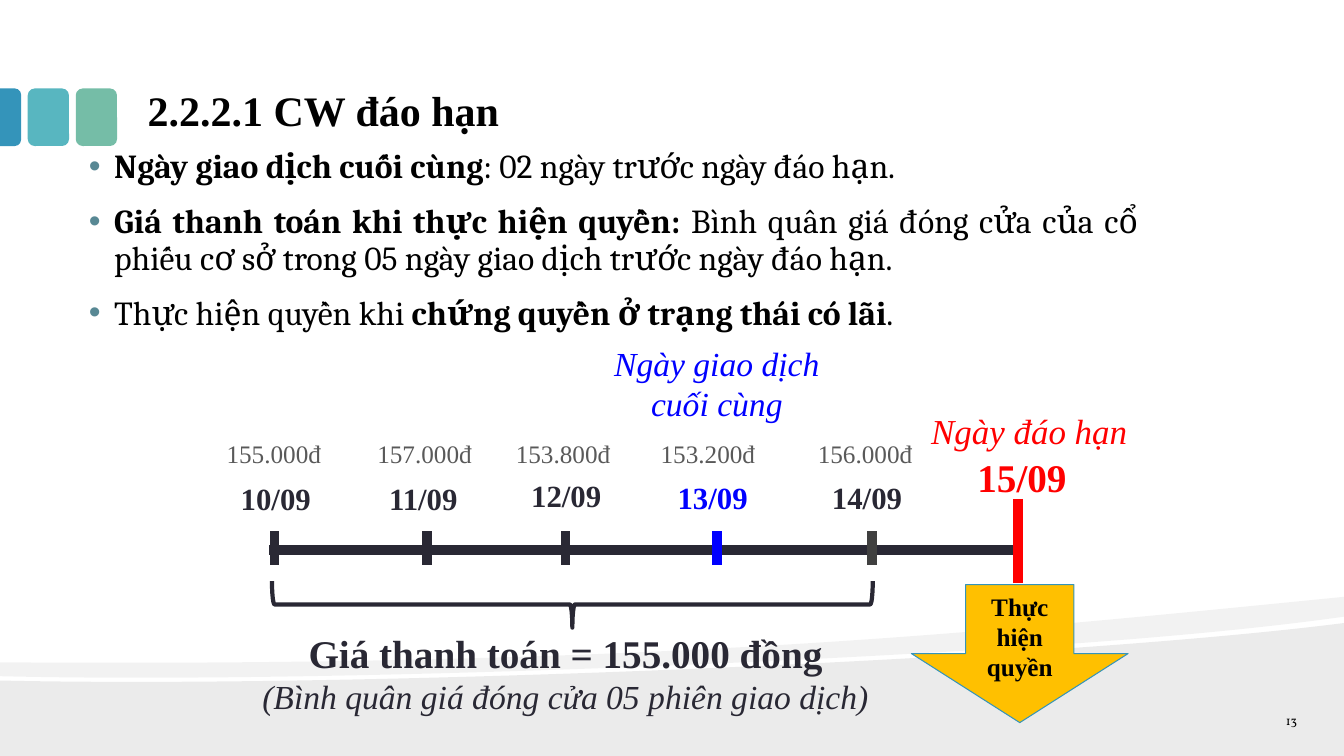
import pptx
import pptx.dml.color
import pptx.enum.shapes
import pptx.enum.text
import pptx.oxml
import pptx.oxml.ns
import pptx.util
from pptx.util import Cm

SHAPES = pptx.enum.shapes.MSO_SHAPE
ALIGN = pptx.enum.text.PP_ALIGN
ANCHOR = pptx.enum.text.MSO_ANCHOR
DARK, BLUE, RED, BLACK = "292834", "0000FF", "FF0000", "000000"
SERIF = "Times New Roman"


def color(hex_value):
    return pptx.dml.color.RGBColor.from_string(hex_value)


def add_xml(parent, tag, **attributes):
    element = pptx.oxml.parse_xml(f"<a:{tag} {pptx.oxml.ns.nsdecls('a')}/>")
    for name, value in attributes.items():
        element.set(name, str(value))
    parent.append(element)
    return element


def format_run(run, size, hex_value, bold=False, italic=False, font=SERIF):
    run.font.size = pptx.util.Pt(size)
    run.font.name = font
    run.font.bold = bold
    run.font.italic = italic
    run.font.color.rgb = color(hex_value)


def paint(shape, fill=None, line=None, width=0.75, opacity=None):
    shape.shadow.inherit = False
    if fill:
        shape.fill.solid()
        shape.fill.fore_color.rgb = color(fill)
        if opacity:
            fill_color = shape.fill._xPr.solidFill.srgbClr
            add_xml(fill_color, "alpha", val=opacity * 1000)
    else:
        shape.fill.background()
    if line:
        shape.line.color.rgb = color(line)
        shape.line.width = pptx.util.Pt(width)
    else:
        shape.line.fill.background()


def add_preset(slide, preset, box, rotation=0, adjustments=(), **style):
    shape = slide.shapes.add_shape(preset, *map(Cm, box))
    shape.rotation = rotation
    for index, value in enumerate(adjustments):
        shape.adjustments[index] = value
    paint(shape, **style)
    return shape


def add_wave(slide, points, curve_starts, opacity):
    """Closed outline; each index in curve_starts begins a cubic of three points."""
    points = [(Cm(x), Cm(y)) for x, y in points]
    builder = slide.shapes.build_freeform(*points[0], scale=1.0)
    builder.add_line_segments(points[1:], close=True)
    shape = builder.convert_to_shape()
    segments = list(shape._element.iter(pptx.oxml.ns.qn("a:lnTo")))
    for start in curve_starts:
        first = segments[start - 1]
        bezier = add_xml(first.getparent(), "cubicBezTo")
        first.addprevious(bezier)
        for segment in segments[start - 1:start + 2]:
            bezier.append(segment[0])
            segment.getparent().remove(segment)
    paint(shape, fill=BLACK, opacity=opacity)


def add_line(slide, x1, y1, x2, y2, hex_value):
    line = slide.shapes.add_connector(
        pptx.enum.shapes.MSO_CONNECTOR.STRAIGHT, Cm(x1), Cm(y1), Cm(x2), Cm(y2))
    line.line.color.rgb = color(hex_value)
    line.line.width = pptx.util.Pt(7)
    add_xml(line._element.spPr, "effectLst")


def add_label(slide, box, text, size, hex_value, align=ALIGN.CENTER, **style):
    shape = slide.shapes.add_textbox(*map(Cm, box))
    shape.text_frame.word_wrap = True
    paragraph = shape.text_frame.paragraphs[0]
    paragraph.text = text
    paragraph.alignment = align
    format_run(paragraph.runs[0], size, hex_value, **style)
    return shape.text_frame


def set_margins(frame):
    frame.margin_left = frame.margin_right = Cm(0.33)
    frame.margin_top = frame.margin_bottom = Cm(0.18)


def add_background(slide):
    add_wave(slide, [(33.87, 15.7), (33.87, 19.05), (0, 19.05), (0, 17.15),
                     (8.94, 17.35), (26.47, 16.64), (33.87, 15.7)], (4,), 8)
    add_wave(slide, [(33.87, 15.04), (33.87, 15.54), (31.9, 15.82), (29.18, 16.08),
                     (26.14, 16.28), (17.73, 16.84), (6.55, 17.2), (0, 17.04),
                     (0, 16.69), (16.56, 16.81), (24.66, 15.95), (33.87, 15.04)],
             (2, 5, 9), 5)
    for left, fill in ((1.91, "75BDA7"), (0.7, "58B6C0")):
        add_preset(slide, SHAPES.ROUNDED_RECTANGLE, (left, 2.23, 1.04, 1.45), fill=fill)
    add_preset(slide, SHAPES.ROUND_2_SAME_RECTANGLE, (-0.46, 2.69, 1.45, 0.53), 90,
               (0.292, 0), fill="3494BA")


def add_title(slide, text):
    title = slide.shapes.title
    title.left, title.top, title.width, title.height = map(Cm, (3.39, 0.43, 27.1, 3.15))
    frame = title.text_frame
    frame.text = text
    frame.auto_size = pptx.enum.text.MSO_AUTO_SIZE.NONE
    frame.vertical_anchor = ANCHOR.BOTTOM
    set_margins(frame)
    frame.paragraphs[0].alignment = ALIGN.LEFT
    format_run(frame.paragraphs[0].runs[0], 30, BLACK, bold=True)


def add_bullets(slide, bullets):
    frame = slide.shapes.add_textbox(*map(Cm, (1.91, 3.59, 27.1, 12.7))).text_frame
    frame.word_wrap = True
    set_margins(frame)
    for index, pieces in enumerate(bullets):
        paragraph = frame.add_paragraph() if index else frame.paragraphs[0]
        paragraph.alignment = ALIGN.JUSTIFY
        paragraph.line_spacing = 0.9
        paragraph.space_before = pptx.util.Pt(13.5)
        properties = paragraph._p.get_or_add_pPr()
        properties.set("marL", str(Cm(0.64)))
        properties.set("indent", str(-Cm(0.64)))
        add_xml(add_xml(properties, "buClr"), "srgbClr", val="588894")
        add_xml(properties, "buFont", typeface="Arial")
        add_xml(properties, "buChar", char="•")
        for text, bold in pieces:
            run = paragraph.add_run()
            run.text = text
            format_run(run, 24, BLACK, bold, font="Cambria")


def add_prices(slide, prices):
    """One row of closing prices, each centred on a tab stop."""
    left, margin = 4.83, 0.25
    frame = add_label(slide, (left, 10.92, 18.85, 3.33),
                      "".join("\t" + price for _, price in prices), 18, "595959",
                      ALIGN.LEFT)
    tab_stops = add_xml(frame.paragraphs[0]._p.get_or_add_pPr(), "tabLst")
    for center, _ in prices:
        add_xml(tab_stops, "tab", pos=Cm(center - left - margin), algn="ctr")


def add_timeline(slide):
    add_line(slide, 6.78, 13.85, 25.63, 13.85, DARK)
    # tick and date centres, top of the date, colours, date
    sessions = (
        (6.92, 6.95, 11.96, DARK, DARK, "10/09"),
        (10.77, 10.67, 11.96, DARK, DARK, "11/09"),
        (14.25, 14.27, 11.89, DARK, DARK, "12/09"),
        (18.06, 17.96, 11.94, BLUE, BLUE, "13/09"),
        (21.97, 21.85, 11.94, "404040", DARK, "14/09"),
    )
    for tick_x, date_x, top, tick_color, date_color, date in sessions:
        add_line(slide, tick_x, 13.39, tick_x, 14.23, tick_color)
        add_label(slide, (date_x - 1.17, top, 2.34, 1.19), date, 22, date_color, bold=True)
    add_prices(slide, ((6.9, "155.000đ"), (10.7, "157.000đ"), (14.19, "153.800đ"),
                       (17.84, "153.200đ"), (21.8, "156.000đ")))
    add_label(slide, (15.13, 8.51, 5.87, 2.31), "Ngày giao dịch cuối cùng", 24, BLUE,
              italic=True)

    # Expiry day
    add_line(slide, 25.65, 12.57, 25.65, 14.7, RED)
    add_label(slide, (23.95, 11.31, 3.61, 1.45), "15/09", 28, RED, bold=True)
    add_label(slide, (22.66, 10.2, 6.55, 1.32), "Ngày đáo hạn", 25, RED, italic=True)
    arrow = add_preset(slide, SHAPES.DOWN_ARROW, (22.97, 14.73, 5.46, 3.48),
                       fill="FFC000", line="3494BA")
    arrow.text_frame.text = "Thực hiện quyền"
    arrow.text_frame.vertical_anchor = ANCHOR.MIDDLE
    arrow.text_frame.paragraphs[0].alignment = ALIGN.CENTER
    format_run(arrow.text_frame.paragraphs[0].runs[0], 18, BLACK, bold=True)

    # Settlement price
    add_preset(slide, SHAPES.LEFT_BRACE, (13.84, 7.66, 1.17, 15.14), 270, (0.055, 0.5),
               line=DARK, width=3)
    frame = add_label(slide, (6.21, 15.73, 16.08, 2.49), "Giá thanh toán = 155.000 đồng",
                      28, DARK, bold=True)
    note = frame.add_paragraph()
    note.text = "(Bình quân giá đóng cửa 05 phiên giao dịch)"
    note.alignment = ALIGN.CENTER
    format_run(note.runs[0], 24, DARK, italic=True)


def main():
    presentation = pptx.Presentation()
    presentation.slide_width, presentation.slide_height = Cm(33.87), Cm(19.05)
    slide = presentation.slides.add_slide(presentation.slide_layouts[5])
    add_background(slide)
    add_title(slide, "2.2.2.1 CW đáo hạn")
    add_bullets(slide, (
        (("Ngày giao dịch cuối cùng", True), (": 02 ngày trước ngày đáo hạn.", False)),
        (("Giá thanh toán khi thực hiện quyền: ", True),
         ("Bình quân giá đóng cửa của cổ phiếu cơ sở trong 05 ngày giao dịch "
          "trước ngày đáo hạn. ", False)),
        (("Thực hiện quyền khi ", False), ("chứng quyền ở trạng thái có lãi", True),
         (". ", False)),
    ))
    add_timeline(slide)
    number = add_label(slide, (30.76, 17.91, 2.26, 0.51), "13", 9, BLACK, ALIGN.RIGHT,
                       font="Vollkorn")
    number.vertical_anchor = ANCHOR.MIDDLE
    set_margins(number)
    presentation.save("out.pptx")


if __name__ == "__main__":
    main()
